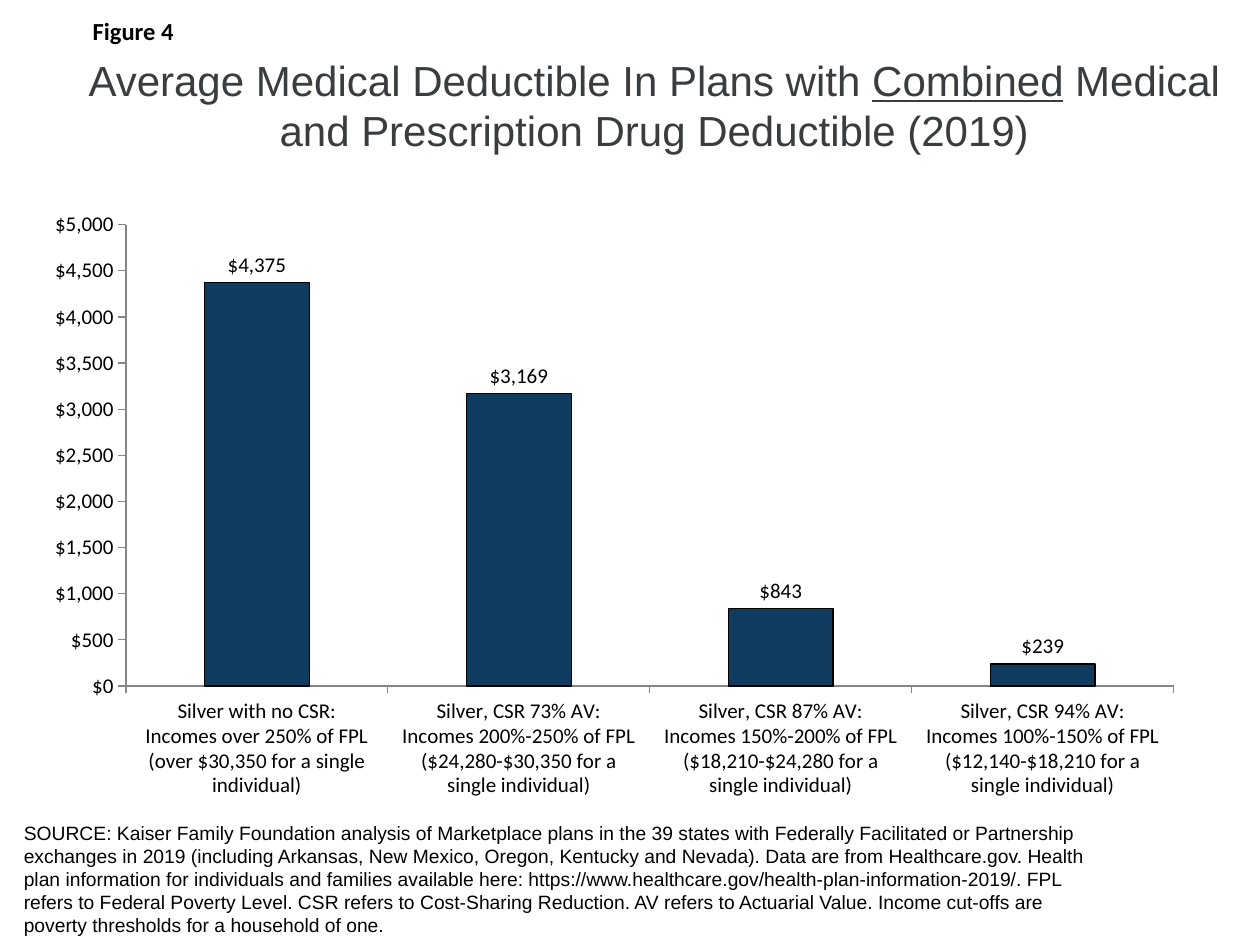
from dataclasses import dataclass

from pptx import Presentation
from pptx.chart.data import CategoryChartData
from pptx.dml.color import RGBColor
from pptx.enum.chart import XL_CHART_TYPE, XL_LABEL_POSITION, XL_TICK_MARK
from pptx.enum.text import MSO_ANCHOR, PP_ALIGN
from pptx.oxml import parse_xml
from pptx.oxml.ns import nsdecls, qn
from pptx.util import Cm, Pt

COLUMNS = XL_CHART_TYPE.COLUMN_CLUSTERED
OUTSIDE_END = XL_LABEL_POSITION.OUTSIDE_END
TICK_OUT = XL_TICK_MARK.OUTSIDE
TOP, MIDDLE = MSO_ANCHOR.TOP, MSO_ANCHOR.MIDDLE
LEFT, CENTER = PP_ALIGN.LEFT, PP_ALIGN.CENTER


@dataclass(frozen=True)
class Theme:
    text_color: RGBColor = RGBColor(0x00, 0x00, 0x00)
    title_color: RGBColor = RGBColor(0x39, 0x3D, 0x40)
    bar_color: RGBColor = RGBColor(0x0E, 0x3B, 0x5E)
    axis_color: RGBColor = RGBColor(0x86, 0x86, 0x86)
    text_font: str = "Arial"
    chart_font: str = "Calibri"
    title_size: Pt = Pt(24)
    figure_size: Pt = Pt(14)
    chart_size: Pt = Pt(12)
    source_size: Pt = Pt(11)
    line_width: Pt = Pt(0.75)
    dollars: str = '"$"#,##0'


TITLE = [
    ("Average Medical Deductible In Plans with ", False),
    ("Combined", True),
    (" Medical and Prescription Drug Deductible (2019)", False),
]
SOURCE = (
    "SOURCE: Kaiser Family Foundation analysis of Marketplace plans in the 39 states with "
    "Federally Facilitated or Partnership exchanges in 2019 (including Arkansas, New Mexico, "
    "Oregon, Kentucky and Nevada). Data are from Healthcare.gov. Health plan information for "
    "individuals and families available here: "
    "https://www.healthcare.gov/health-plan-information-2019/. FPL refers to Federal Poverty "
    "Level. CSR refers to Cost-Sharing Reduction. AV refers to Actuarial Value. Income cut-offs "
    "are poverty thresholds for a household of one."
)
PLANS = [
    ("Silver with no CSR:", "over 250%", "over $30,350", 4375),
    ("Silver, CSR 73% AV:", "200%-250%", "$24,280-$30,350", 3169),
    ("Silver, CSR 87% AV:", "150%-200%", "$18,210-$24,280", 843),
    ("Silver, CSR 94% AV:", "100%-150%", "$12,140-$18,210", 239),
]


class SlideBuilder:
    """Hold the theme and the current slide, and add elements to it."""

    def __init__(self, slide, theme):
        self.slide = slide
        self.theme = theme

    def add_text(self, box, runs, size, font_name, color, align=LEFT, anchor=TOP, bold=False):
        frame = self.slide.shapes.add_textbox(*map(Cm, box)).text_frame
        frame.word_wrap = True
        frame.vertical_anchor = anchor
        paragraph = frame.paragraphs[0]
        paragraph.alignment = align
        font = paragraph.font
        font.size, font.name, font.bold = size, font_name, bold
        font.color.rgb = color
        for text, underlined in runs:
            run = paragraph.add_run()
            run.text = text
            if underlined:
                run.font.underline = True

    def add_column_chart(self, box, plans, plot_area):
        data = CategoryChartData(number_format=self.theme.dollars)
        data.categories = [
            f"{plan}\nIncomes {level} of FPL\n({income} for a single individual)"
            for plan, level, income, _ in plans
        ]
        data.add_series("Series 1", [deductible for *_, deductible in plans])
        chart = self.slide.shapes.add_chart(COLUMNS, *map(Cm, box), data).chart
        chart.has_legend = chart.has_title = False
        self.style_font(chart.font)
        self.style_axes(chart)
        self.style_columns(chart.plots[0])
        self.place_plot_area(chart, plot_area)

    def style_font(self, font):
        font.size, font.name = self.theme.chart_size, self.theme.chart_font
        font.color.rgb = self.theme.text_color

    def style_axes(self, chart):
        for axis in (chart.category_axis, chart.value_axis):
            axis.has_major_gridlines = False
            axis.major_tick_mark = TICK_OUT
            axis.format.line.color.rgb = self.theme.axis_color
            axis.format.line.width = self.theme.line_width
        value_axis = chart.value_axis
        value_axis.minimum_scale, value_axis.maximum_scale = 0, 5000
        value_axis.major_unit = 500
        value_axis.tick_labels.number_format = self.theme.dollars
        value_axis.tick_labels.number_format_is_linked = False

    def style_columns(self, plot):
        plot.gap_width = 150
        plot.vary_by_categories = False
        columns = plot.series[0].format
        columns.fill.solid()
        columns.fill.fore_color.rgb = self.theme.bar_color
        columns.line.color.rgb = self.theme.text_color
        columns.line.width = self.theme.line_width
        plot.has_data_labels = True
        labels = plot.data_labels
        labels.show_value = True
        labels.position = OUTSIDE_END
        labels.number_format = self.theme.dollars
        labels.number_format_is_linked = False
        self.style_font(labels.font)

    def place_plot_area(self, chart, fractions):
        plot_area = chart._chartSpace.chart.plotArea
        for layout in plot_area.findall(qn("c:layout")):
            plot_area.remove(layout)
        modes = '<c:xMode val="edge"/><c:yMode val="edge"/>'
        sizes = "".join(f'<c:{key} val="{part}"/>' for key, part in zip("xywh", fractions))
        plot_area.insert(0, parse_xml(
            f'<c:layout {nsdecls("c")}><c:manualLayout><c:layoutTarget val="inner"/>'
            f"{modes}{sizes}</c:manualLayout></c:layout>"
        ))


def main():
    presentation = Presentation()
    presentation.slide_width, presentation.slide_height = Cm(25.4), Cm(19.05)
    slide = presentation.slides.add_slide(presentation.slide_layouts[6])
    theme = Theme()
    builder = SlideBuilder(slide, theme)
    builder.add_text((0.23, 16.43, 22.23, 2.62), [(SOURCE, False)], theme.source_size,
                     theme.text_font, theme.text_color)
    builder.add_column_chart((0.66, 4.04, 23.47, 12.24), PLANS, (0.08, 0.04, 0.9, 0.76))
    builder.add_text((1.24, 0.84, 23.9, 2.54), TITLE, theme.title_size,
                     theme.text_font, theme.title_color, CENTER, MIDDLE)
    builder.add_text((0.46, 0.2, 4.45, 0.86), [("Figure 4", False)], theme.figure_size,
                     theme.chart_font, theme.text_color, CENTER, bold=True)
    presentation.save("out.pptx")


if __name__ == "__main__":
    main()
